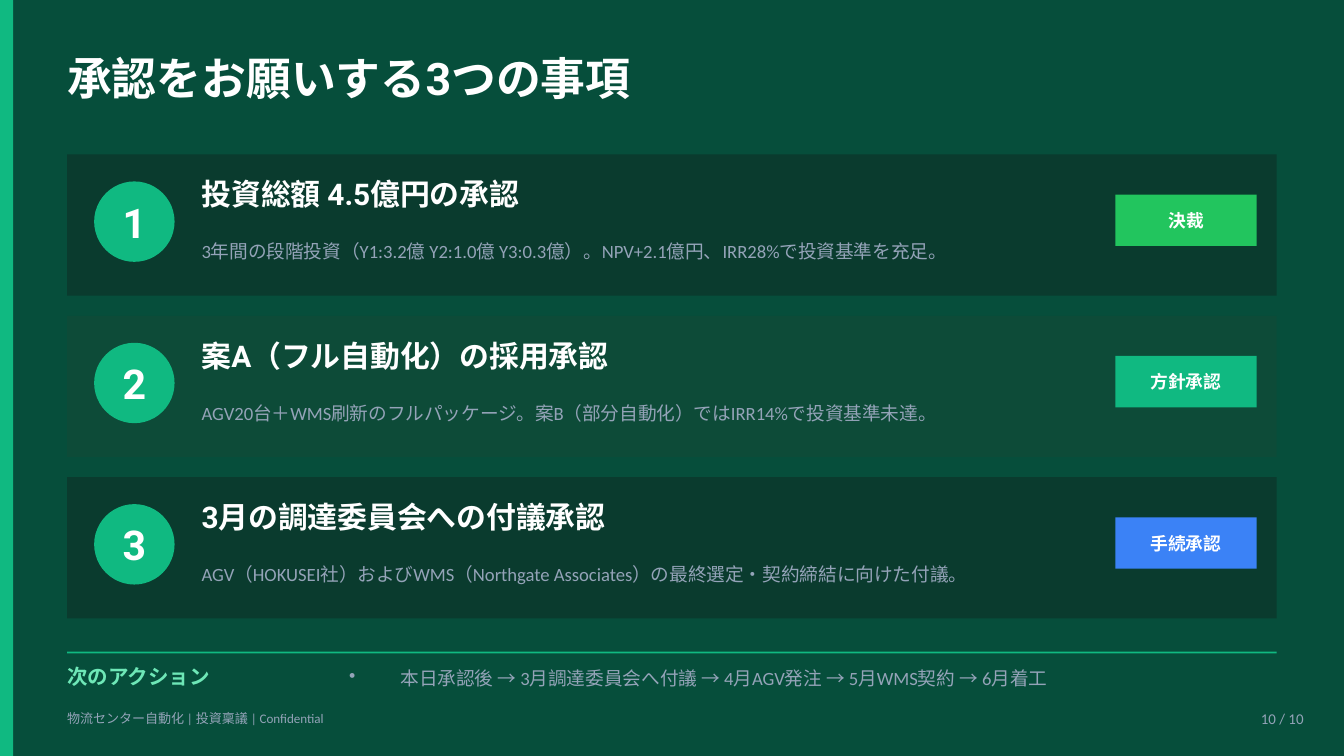
from dataclasses import dataclass

from lxml import etree
from pptx import Presentation
from pptx import util as u
from pptx.dml import color
from pptx.enum import shapes, text
from pptx.oxml import ns


@dataclass(frozen=True)
class Theme:
    """Colours, fonts and type sizes of the deck."""
    background: str = "064E3B"
    accent: str = "10B981"
    mint: str = "6EE7B7"
    white: str = "FFFFFF"
    muted: str = "94A3B8"
    card: str = "0A3B2E"
    card_alt: str = "0D4B38"
    green: str = "22C55E"
    blue: str = "3B82F6"
    heading_font: str = "Roboto"
    body_font: str = "Calibri"
    title_size: float = 24
    number_size: float = 22
    item_size: float = 16
    label_size: float = 11
    body_size: float = 10
    badge_size: float = 9.5
    page_size: float = 8
    footer_size: float = 7


THEME = Theme()
LEFT, CENTER, RIGHT = text.PP_ALIGN.LEFT, text.PP_ALIGN.CENTER, text.PP_ALIGN.RIGHT
RECT, OVAL = shapes.MSO_SHAPE.RECTANGLE, shapes.MSO_SHAPE.OVAL

APPROVALS = [
    ("投資総額 4.5億円の承認",
     "3年間の段階投資（Y1:3.2億 Y2:1.0億 Y3:0.3億）。NPV+2.1億円、IRR28%で投資基準を充足。",
     "決裁", THEME.green),
    ("案A（フル自動化）の採用承認",
     "AGV20台＋WMS刷新のフルパッケージ。案B（部分自動化）ではIRR14%で投資基準未達。",
     "方針承認", THEME.accent),
    ("3月の調達委員会への付議承認",
     "AGV（HOKUSEI社）およびWMS（Northgate Associates）の最終選定・契約締結に向けた付議。",
     "手続承認", THEME.blue),
]


def rgb(value):
    """Turn a hex string into a colour."""
    return color.RGBColor.from_string(value)


def write(holder, words, size, ink=THEME.white, bold=True, align=LEFT, inset=False):
    """Set and format the single paragraph of a text holder."""
    frame = holder.text_frame
    frame.word_wrap = True
    frame.vertical_anchor = text.MSO_ANCHOR.MIDDLE
    if not inset:
        frame.margin_left = frame.margin_right = frame.margin_top = frame.margin_bottom = 0
    frame.text = words
    paragraph = frame.paragraphs[0]
    paragraph.alignment = align
    for run in paragraph.runs:
        run.font.name = THEME.heading_font if bold else THEME.body_font
        run.font.size = u.Pt(size)
        run.font.bold = bold
        run.font.color.rgb = rgb(ink)
    return paragraph


def add_block(slide, preset, box, fill):
    """Draw a flat filled shape in a box given in centimetres."""
    block = slide.shapes.add_shape(preset, *map(u.Cm, box))
    block.fill.solid()
    block.fill.fore_color.rgb = rgb(fill)
    block.line.fill.background()
    block.shadow.inherit = False
    return block


def add_text(slide, box, words, size, **style):
    """Place a text box in a box given in centimetres."""
    return write(slide.shapes.add_textbox(*map(u.Cm, box)), words, size, **style)


def add_bullet(paragraph, indent):
    """Give a paragraph a hanging bullet."""
    properties = paragraph._p.get_or_add_pPr()
    properties.set("marL", str(u.Cm(indent)))
    properties.set("indent", str(-u.Cm(indent)))
    etree.SubElement(properties, ns.qn("a:buChar")).set("char", "•")


def add_header(slide, box):
    """Place the side band and the slide title."""
    left, top, width, height = box
    add_block(slide, RECT, (left, top, 0.25, height), THEME.accent)
    add_text(slide, (left + 1.27, top + 0.76, width - 2.54, 1.4),
             "承認をお願いする3つの事項", THEME.title_size)


def add_approval(slide, box, number, approval):
    """Place one numbered approval card with its badge."""
    left, top, width, height = box
    heading, detail, decision, badge_fill = approval
    add_block(slide, RECT, box, THEME.card if number % 2 else THEME.card_alt)
    circle = add_block(slide, OVAL, (left + 0.51, top + 0.51, 1.52, 1.52), THEME.accent)
    write(circle, str(number), THEME.number_size, align=CENTER)
    add_text(slide, (left + 2.54, top + 0.3, 15.24, 0.89), heading, THEME.item_size)
    add_text(slide, (left + 2.54, top + 1.32, 16.51, 1.02), detail,
             THEME.body_size, ink=THEME.muted, bold=False)
    badge = add_block(slide, RECT, (left + width - 3.05, top + 0.76, 2.67, 0.97), badge_fill)
    write(badge, decision, THEME.badge_size, align=CENTER)


def add_next_actions(slide, box):
    """Place the divider and the line of next actions."""
    left, top, width, height = box
    add_block(slide, RECT, (left, top, width, 0.03), THEME.accent)
    add_text(slide, (left, top + 0.18, 5.08, 0.56), "次のアクション",
             THEME.label_size, ink=THEME.mint)
    steps = add_text(slide, (left + 5.08, top + 0.18, width - 5.08, height - 0.18),
                     "本日承認後 → 3月調達委員会へ付議 → 4月AGV発注 → 5月WMS契約 → 6月着工",
                     THEME.body_size, ink=THEME.muted, bold=False, inset=True)
    steps.space_after = u.Pt(4)
    add_bullet(steps, 0.97)


def add_footer(slide, box):
    """Place the page number and the document line."""
    left, top, width, height = box
    style = dict(ink=THEME.muted, bold=False, inset=True)
    add_text(slide, (left + width - 1.78, top, 1.78, height), "10 / 10",
             THEME.page_size, align=RIGHT, **style)
    add_text(slide, (left, top, 12.7, height),
             "物流センター自動化 | 投資稟議 | Confidential", THEME.footer_size, **style)


def main():
    """Build and save the approval slide."""
    deck = Presentation()
    deck.slide_width, deck.slide_height = u.Cm(25.4), u.Cm(14.29)
    slide = deck.slides.add_slide(deck.slide_layouts[6])
    slide.background.fill.solid()
    slide.background.fill.fore_color.rgb = rgb(THEME.background)
    add_header(slide, (0, 0, 25.4, 14.29))
    for index, approval in enumerate(APPROVALS):
        add_approval(slide, (1.27, 2.92 + index * 3.05, 22.86, 2.67), index + 1, approval)
    add_next_actions(slide, (1.27, 12.32, 22.86, 0.82))
    add_footer(slide, (1.02, 13.26, 23.87, 0.64))
    deck.save("out.pptx")


if __name__ == "__main__":
    main()
